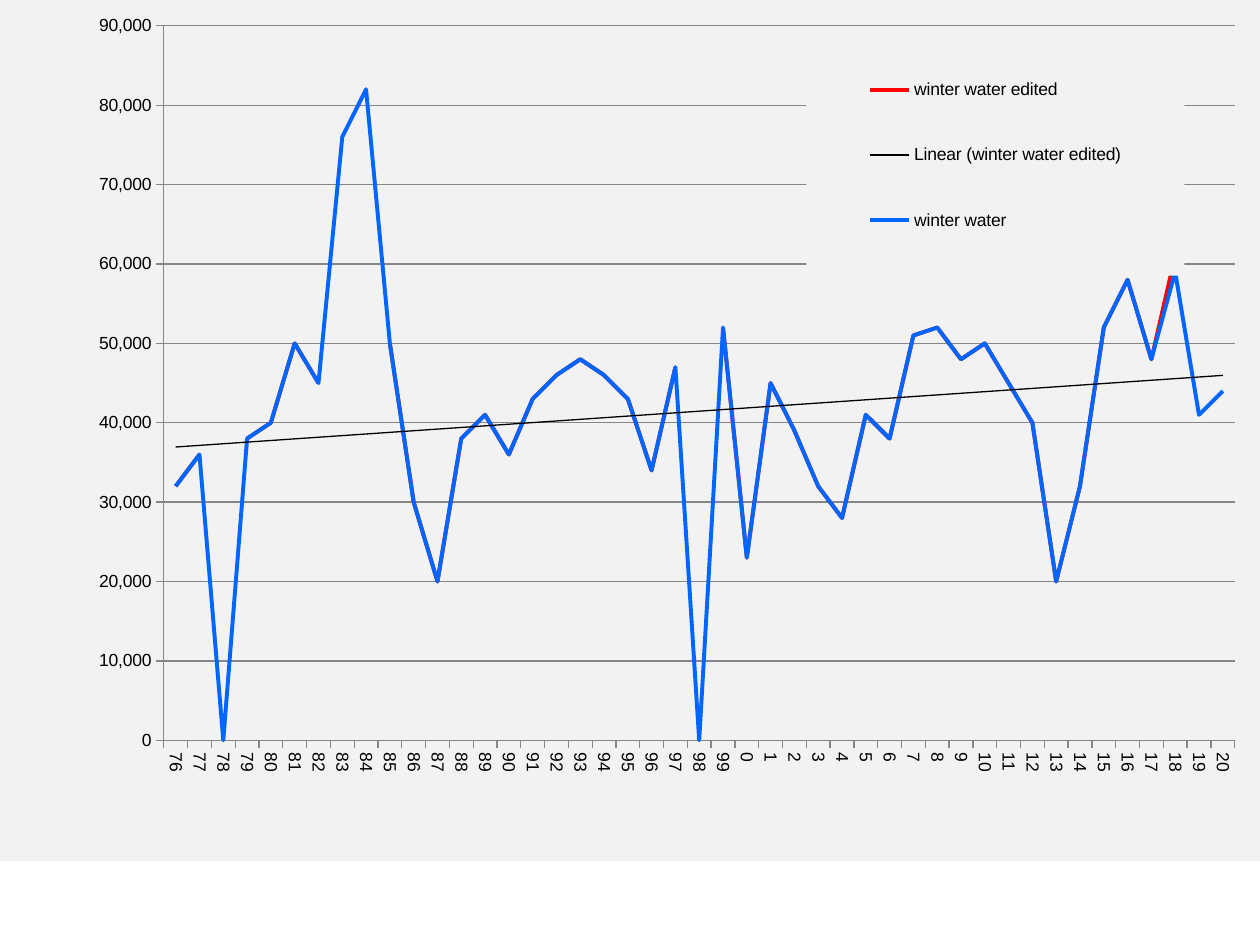
from dataclasses import dataclass
from typing import Optional

from lxml import etree
from pptx import Presentation
from pptx.chart.data import CategoryChartData
from pptx.dml.color import RGBColor
from pptx.enum import chart as ch
from pptx.oxml import parse_xml
from pptx.oxml.ns import qn
from pptx.util import Pt

NS = ('xmlns:c="http://schemas.openxmlformats.org/drawingml/2006/chart" '
      'xmlns:a="http://schemas.openxmlformats.org/drawingml/2006/main"')


@dataclass(frozen=True)
class Theme:
    font: str = "Arial"
    size: float = 10
    ink: str = "000000"
    panel: str = "F2F2F2"
    grid: str = "868686"
    edited: str = "FF0000"
    water: str = "0066FF"
    water_width: float = 2.25
    thin: float = 0.75


@dataclass(frozen=True)
class WaterSeries:
    name: str
    thousands: list[Optional[int]]
    color: str
    trend: bool = False


@dataclass(frozen=True)
class Area:
    x: float
    y: float
    w: float
    h: float


THEME = Theme()
YEARS = [str(year % 100) for year in range(1976, 2021)]
WINTER = [32, 36, 0, 38, 40, 50, 45, 76, 82, 50, 30, 20, 38, 41, 36,
          43, 46, 48, 46, 43, 34, 47, 0, 52, 23, 45, 39, 32, 28, 41,
          38, 51, 52, 48, 50, 45, 40, 20, 32, 52, 58, 48, 59, 41, 44]
# Years changed in the edited series; None leaves a gap
EDITS = {"78": None, "83": None, "84": None, "98": None,
         "18": 61, "19": None, "20": None}
EDITED = [EDITS.get(year, value) for year, value in zip(YEARS, WINTER)]
SERIES = [
    WaterSeries("winter water edited", EDITED, THEME.edited, trend=True),
    WaterSeries("winter water", WINTER, THEME.water),
]


def fill_xml(color: str) -> etree._Element:
    return parse_xml(f'<c:spPr {NS}><a:solidFill><a:srgbClr val="{color}"/></a:solidFill>'
                     '<a:ln><a:noFill/></a:ln></c:spPr>')


def place(parent: etree._Element, area: Area, index: int, inner: bool = False) -> None:
    """Give the plot or the legend a fixed area, as fractions of the chart."""
    for old in parent.findall(qn("c:layout")):
        parent.remove(old)
    target = '<c:layoutTarget val="inner"/>' if inner else ""
    parent.insert(index, parse_xml(
        f'<c:layout {NS}><c:manualLayout>{target}'
        '<c:xMode val="edge"/><c:yMode val="edge"/>'
        f'<c:x val="{area.x}"/><c:y val="{area.y}"/>'
        f'<c:w val="{area.w}"/><c:h val="{area.h}"/></c:manualLayout></c:layout>'))


def add_trend(series) -> None:
    series._element.find(qn("c:cat")).addprevious(parse_xml(
        f'<c:trendline {NS}><c:spPr><a:ln w="{Pt(THEME.thin)}"><a:solidFill>'
        f'<a:srgbClr val="{THEME.ink}"/></a:solidFill></a:ln></c:spPr>'
        '<c:trendlineType val="linear"/><c:dispRSqr val="0"/><c:dispEq val="0"/>'
        '</c:trendline>'))


def style_line(line, color: str, width: float) -> None:
    line.color.rgb = RGBColor.from_string(color)
    line.width = Pt(width)


def style_series(series, water: WaterSeries) -> None:
    series.smooth = False
    series.marker.style = ch.XL_MARKER_STYLE.NONE
    style_line(series.format.line, water.color, THEME.water_width)
    if water.trend:
        add_trend(series)


def style_axes(chart) -> None:
    years, volume = chart.category_axis, chart.value_axis
    for axis in (years, volume):
        axis.major_tick_mark = ch.XL_TICK_MARK.OUTSIDE
        axis.minor_tick_mark = ch.XL_TICK_MARK.NONE
        style_line(axis.format.line, THEME.grid, THEME.thin)
        axis.tick_labels.font.size = Pt(THEME.size)
    years._element.find(qn("c:txPr")).find(qn("a:bodyPr")).set("rot", "5400000")
    volume.minimum_scale, volume.maximum_scale = 0, 90000
    volume.major_unit = 10000
    volume.has_major_gridlines = True
    style_line(volume.major_gridlines.format.line, THEME.grid, THEME.thin)
    volume.tick_labels.number_format = "#,##0"
    volume.tick_labels.number_format_is_linked = False


def style_legend(chart) -> None:
    chart.has_legend = True
    legend = chart.legend
    legend.position = ch.XL_LEGEND_POSITION.RIGHT
    legend.include_in_layout = False
    legend.font.size = Pt(THEME.size)
    place(legend._element, Area(0.64, 0.04, 0.3, 0.28), index=1)
    legend._element.find(qn("c:overlay")).addnext(fill_xml(THEME.panel))


def add_water_chart(slide) -> None:
    data = CategoryChartData(number_format="#,##0")
    data.categories = YEARS
    for water in SERIES:
        data.add_series(water.name, [None if v is None else v * 1000 for v in water.thousands])
    chart = slide.shapes.add_chart(ch.XL_CHART_TYPE.LINE, Pt(0), Pt(0),
                                   Pt(720), Pt(492), data).chart
    chart.has_title = False
    chart.font.name = THEME.font
    chart.font.size = Pt(THEME.size)
    chart.font.color.rgb = RGBColor.from_string(THEME.ink)
    chart.plots[0].vary_by_categories = False
    for series, water in zip(chart.plots[0].series, SERIES):
        style_series(series, water)
    style_axes(chart)
    style_legend(chart)

    # Panel colour and plot position
    root = chart._chartSpace.find(qn("c:chart"))
    root.addnext(fill_xml(THEME.panel))
    place(root.find(qn("c:plotArea")), Area(0.13, 0.03, 0.85, 0.83), index=0, inner=True)


def main() -> None:
    deck = Presentation()
    deck.slide_width, deck.slide_height = Pt(720), Pt(540)
    add_water_chart(deck.slides.add_slide(deck.slide_layouts[6]))
    deck.save("out.pptx")


if __name__ == "__main__":
    main()
